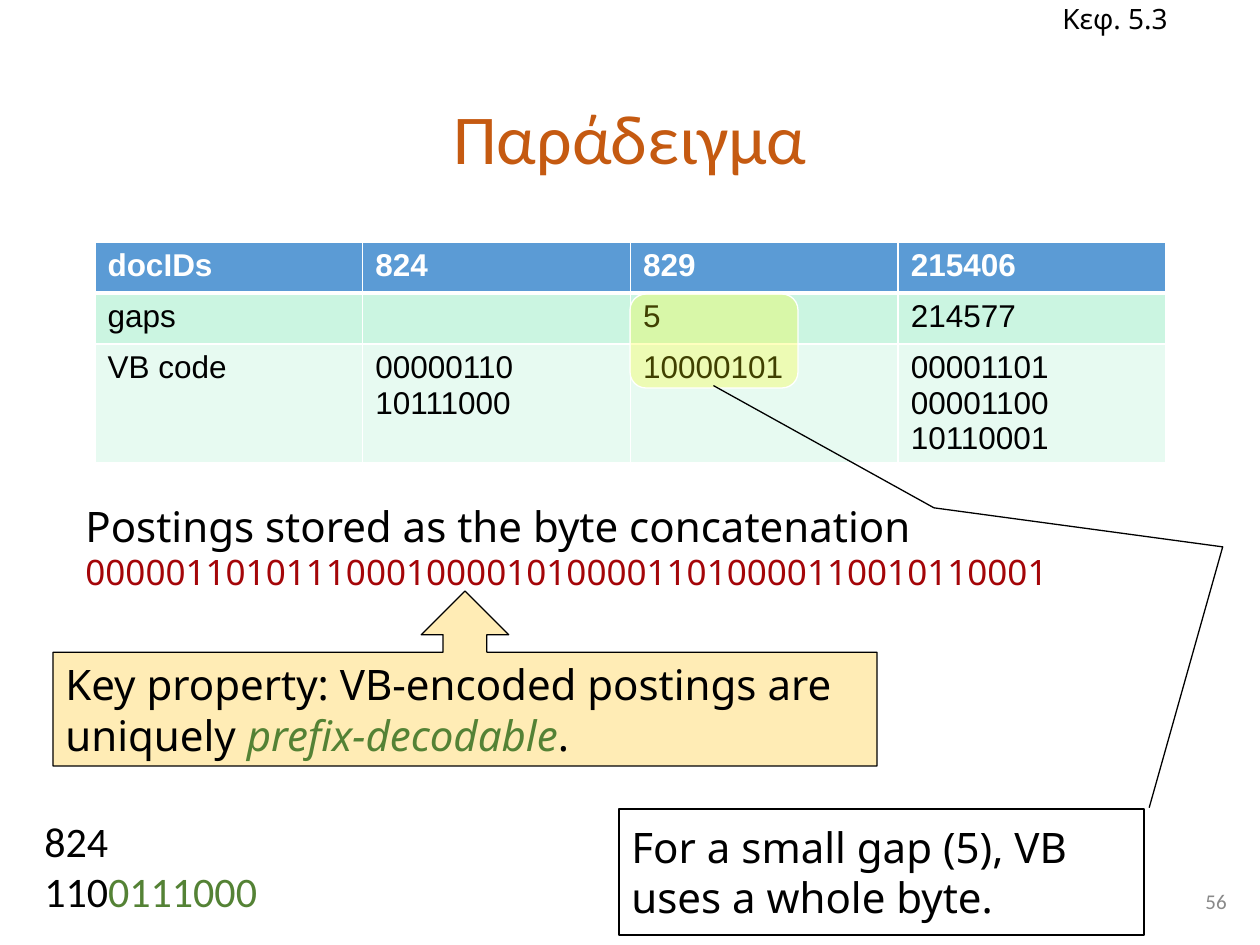
from lxml.etree import SubElement
from pptx import Presentation
from pptx.dml.color import RGBColor
from pptx.enum.shapes import MSO_SHAPE
from pptx.enum.text import MSO_ANCHOR, PP_ALIGN
from pptx.oxml.ns import qn
from pptx.util import Emu, Pt

PX = 914400 / 126
BLACK = RGBColor(0x00, 0x00, 0x00)
WHITE = RGBColor(0xFF, 0xFF, 0xFF)
ORANGE = RGBColor(0xC5, 0x5A, 0x11)
BLUE = RGBColor(0x5B, 0x9B, 0xD5)
MINT = RGBColor(0xCB, 0xF5, 0xE1)
PALE_MINT = RGBColor(0xE7, 0xFA, 0xF1)
GREY = RGBColor(0x89, 0x89, 0x89)
RED = RGBColor(0xA4, 0x05, 0x08)
GREEN = RGBColor(0x54, 0x82, 0x35)
GOLD = RGBColor(0xFF, 0xC0, 0x00)
YELLOW = RGBColor(0xFF, 0xFF, 0x00)

POSTINGS = [
    ["docIDs", "824", "829", "215406"],
    ["gaps", "", "5", "214577"],
    ["VB code", "00000110 10111000", "10000101", "00001101 00001100 10110001"],
]
ROW_FILLS = [BLUE, MINT, PALE_MINT]
ROW_HEIGHTS = [51, 51, 118]
RULES = [1, 3, 1, 1]


def px(*lengths):
    """Turn pixel lengths into EMU."""
    return [Emu(round(length * PX)) for length in lengths]


def write(frame, lines, font="Noto Sans", size=24, color=BLACK, bold=False,
          align=PP_ALIGN.LEFT, anchor=MSO_ANCHOR.TOP, spacing=None):
    """Fill a frame with lines, each a list of (text, overrides) runs."""
    frame.word_wrap = True
    frame.vertical_anchor = anchor
    for index, line in enumerate(lines):
        paragraph = frame.paragraphs[0] if index == 0 else frame.add_paragraph()
        paragraph.alignment = align
        paragraph.line_spacing = spacing
        for text, overrides in line:
            run = paragraph.add_run()
            run.text = text
            run.font.name = font
            run.font.size = Pt(overrides.get("size", size))
            run.font.bold = bold
            run.font.italic = overrides.get("italic", False)
            run.font.color.rgb = overrides.get("color", color)


def add_text(slide, box, lines, **style):
    """Add a text box."""
    write(slide.shapes.add_textbox(*px(*box)).text_frame, lines, **style)


def add_outlined(slide, kind, box, adjustments, line, fill=None, opacity=100):
    """Add a thinly outlined preset shape, optionally with a translucent fill."""
    shape = slide.shapes.add_shape(kind, *px(*box))
    shape.shadow.inherit = False
    for index, value in enumerate(adjustments):
        shape.adjustments[index] = value
    shape.line.color.rgb = line
    shape.line.width = Pt(0.75)
    if fill is None:
        shape.fill.background()
    else:
        shape.fill.solid()
        shape.fill.fore_color.rgb = fill
        color = shape.fill._xPr.find(qn("a:solidFill"))[0]
        SubElement(color, qn("a:alpha"), val=str(opacity * 1000))
    return shape


def rule_cell(cell, top, bottom):
    """Draw white borders with the given top and bottom widths in points."""
    properties = cell._tc.get_or_add_tcPr()
    widths = {"a:lnL": 1, "a:lnR": 1, "a:lnT": top, "a:lnB": bottom}
    for index, (tag, width) in enumerate(widths.items()):
        border = SubElement(properties, qn(tag), w=str(Pt(width)))
        SubElement(SubElement(border, qn("a:solidFill")), qn("a:srgbClr"), val=str(WHITE))
        properties.insert(index, border)


def add_postings_table(slide):
    """Add the table of docIDs, gaps and VB codes."""
    box = px(95, 242, 1071, sum(ROW_HEIGHTS))
    table = slide.shapes.add_table(len(POSTINGS), len(POSTINGS[0]), *box).table
    for row, values in enumerate(POSTINGS):
        table.rows[row].height = px(ROW_HEIGHTS[row])[0]
        header = row == 0
        for column, value in enumerate(values):
            cell = table.cell(row, column)
            cell.fill.solid()
            cell.fill.fore_color.rgb = ROW_FILLS[row]
            rule_cell(cell, RULES[row], RULES[row + 1])
            if value:
                write(cell.text_frame, [[(value, {})]], font="Arial", size=18,
                      color=WHITE if header else BLACK, bold=header)


def add_title(slide):
    """Place and format the title."""
    title = slide.shapes.title
    title.left, title.top, title.width, title.height = px(87, 50, 1086, 183)
    write(title.text_frame, [[("Παράδειγμα", {})]], font="Calibri", size=40,
          color=ORANGE, align=PP_ALIGN.CENTER, anchor=MSO_ANCHOR.MIDDLE, spacing=0.9)


def main():
    """Build and save the slide."""
    deck = Presentation()
    deck.slide_width, deck.slide_height = px(1260, 945)
    slide = deck.slides.add_slide(deck.slide_layouts[5])
    add_title(slide)
    add_postings_table(slide)
    add_text(slide, (955, 876, 284, 50), [[("56", {})]], font="Calibri", size=12,
             color=GREY, align=PP_ALIGN.RIGHT, anchor=MSO_ANCHOR.MIDDLE)
    add_text(slide, (73, 494, 1108, 106), [
        [("Postings stored as the byte concatenation", {})],
        [("000001101011100010000101000011010000110010110001", {"size": 20, "color": RED})],
    ])
    key_property = add_outlined(slide, MSO_SHAPE.UP_ARROW_CALLOUT, (53, 591, 824, 175),
                                (0.25, 0.25, 0.25, 0.65), BLACK, GOLD, 29)
    write(key_property.text_frame, [
        [("Key property: VB-encoded postings are", {})],
        [("uniquely ", {}), ("prefix-decodable", {"color": GREEN, "italic": True}), (".", {})],
    ], anchor=MSO_ANCHOR.MIDDLE)
    add_outlined(slide, MSO_SHAPE.ROUNDED_RECTANGLE, (630, 294, 168, 94),
                 (0.17,), WHITE, YELLOW, 25)
    small_gap = add_outlined(slide, MSO_SHAPE.LINE_CALLOUT_3, (619, 809, 525, 126),
                             (-0.01, 1.01, -2.08, 1.15, -2.39, 0.6, -3.36, 0.18), BLACK)
    write(small_gap.text_frame, [
        [("For a small gap (5), VB", {})],
        [("uses a whole byte.", {})],
    ], anchor=MSO_ANCHOR.MIDDLE)
    add_text(slide, (1050, -5, 139, 47), [[("Κεφ. 5.3", {})]], size=16,
             anchor=MSO_ANCHOR.MIDDLE)
    add_text(slide, (32, 809, 388, 115), [
        [("824", {})],
        [("110", {}), ("0111000", {"color": GREEN})],
    ], font="Calibri")
    deck.save("out.pptx")


if __name__ == "__main__":
    main()
